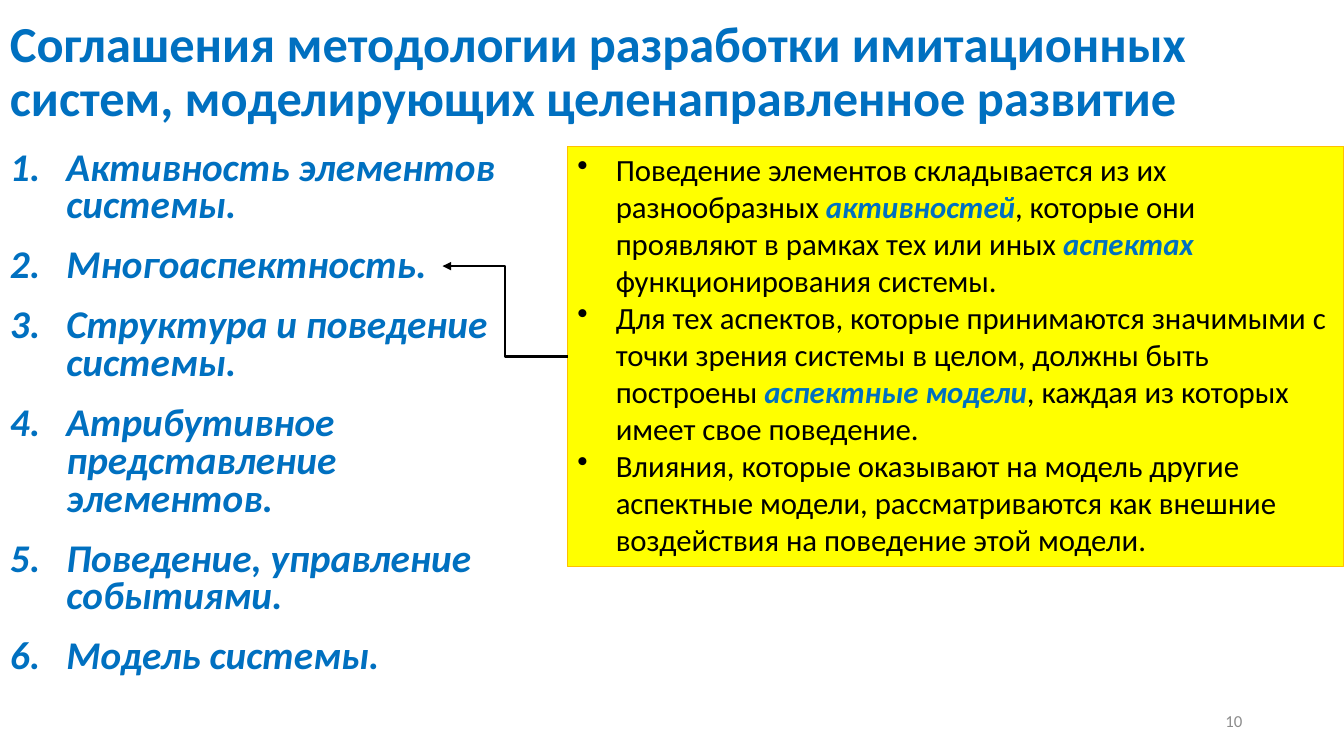
from typing import NamedTuple

from lxml.etree import SubElement
from pptx import Presentation
from pptx.dml.color import RGBColor
from pptx.enum.shapes import MSO_CONNECTOR, MSO_SHAPE
from pptx.enum.text import MSO_ANCHOR, PP_ALIGN
from pptx.oxml.ns import qn
from pptx.util import Inches, Pt

SLIDE_WIDTH, SLIDE_HEIGHT = Inches(13.33), Inches(7.5)
FONT = "Calibri"
BLUE, BLACK, GRAY, YELLOW, GOLD = "0070C0", "000000", "8C8C8C", "FFFF00", "FFC000"


class Area(NamedTuple):
    """A rectangle in percent of the slide's width and height."""
    left: float
    top: float
    width: float
    height: float


class Span(NamedTuple):
    text: str
    emphasized: bool = False


class Style(NamedTuple):
    size: int
    color: str
    bold: bool = False
    italic: bool = False


TITLE_AREA = Area(0, 0, 98.2, 19.33)
LIST_AREA = Area(0, 19.33, 98.2, 71.2)
NOTE_AREA = Area(42.23, 19.33, 57.77, 55.6)
NUMBER_AREA = Area(70.67, 92.67, 22.5, 5.33)
ARROW_TIP = (32.93, 35.2)

TITLE_STYLE = Style(36, BLUE, bold=True)
LIST_STYLE = Style(28, BLUE, bold=True, italic=True)
NOTE_STYLE = Style(22, BLACK)
EMPHASIS_STYLE = Style(22, BLUE, bold=True, italic=True)
NUMBER_STYLE = Style(12, GRAY)

TITLE = ("Соглашения методологии разработки имитационных систем, "
         "моделирующих целенаправленное развитие")
AGREEMENTS = [
    "Активность элементов \nсистемы.",
    "Многоаспектность.",
    "Структура и поведение\nсистемы.",
    "Атрибутивное \nпредставление \nэлементов.",
    "Поведение, управление \nсобытиями.",
    "Модель системы.",
]
NOTES = [
    [Span("Поведение элементов складывается из их разнообразных "),
     Span("активностей", True),
     Span(", которые они проявляют в рамках тех или иных "),
     Span("аспектах ", True),
     Span("функционирования системы.")],
    [Span("Для тех аспектов, которые принимаются значимыми с точки зрения "
          "системы в целом, должны быть построены "),
     Span("аспектные модели", True),
     Span(", каждая из которых имеет свое поведение.")],
    [Span("Влияния, которые оказывают на модель другие аспектные модели, "
          "рассматриваются как внешние воздействия на поведение этой модели.")],
]


def rgb(color: str) -> RGBColor:
    return RGBColor.from_string(color)


def across(percent: float) -> int:
    return round(SLIDE_WIDTH * percent / 100)


def down(percent: float) -> int:
    return round(SLIDE_HEIGHT * percent / 100)


def place(area: Area) -> tuple[int, int, int, int]:
    return across(area.left), down(area.top), across(area.width), down(area.height)


def apply_style(font, style: Style) -> None:
    font.name, font.size = FONT, Pt(style.size)
    font.bold, font.italic = style.bold, style.italic
    font.color.rgb = rgb(style.color)


def set_marker(paragraph, indent: float, tag: str, **attributes: str) -> None:
    """Give the paragraph a hanging bullet or number."""
    properties = paragraph._p.get_or_add_pPr()
    properties.set("marL", str(Inches(indent)))
    properties.set("indent", str(-Inches(indent)))
    marker = properties.makeelement(qn(tag), attributes)
    properties.insert_element_before(marker, "a:tabLst", "a:defRPr", "a:extLst")


def next_paragraph(frame, index: int):
    return frame.add_paragraph() if index else frame.paragraphs[0]


def add_text(page, area: Area, texts: list[str], style: Style,
             anchor: MSO_ANCHOR = MSO_ANCHOR.MIDDLE) -> list:
    """Add a text box and return its paragraphs."""
    frame = page.shapes.add_textbox(*place(area)).text_frame
    frame.word_wrap = True
    frame.vertical_anchor = anchor
    for index, text in enumerate(texts):
        paragraph = next_paragraph(frame, index)
        paragraph.text = text
        apply_style(paragraph.font, style)
    return list(frame.paragraphs)


def add_agreements(page) -> None:
    for paragraph in add_text(page, LIST_AREA, AGREEMENTS, LIST_STYLE, MSO_ANCHOR.TOP):
        paragraph.line_spacing = 0.8
        paragraph.space_before, paragraph.space_after = Pt(10), Pt(6)
        set_marker(paragraph, 0.56, "a:buAutoNum", type="arabicPeriod")


def add_notes(page) -> None:
    box = page.shapes.add_shape(MSO_SHAPE.RECTANGLE, *place(NOTE_AREA))
    box.shadow.inherit = False
    box.fill.solid()
    box.fill.fore_color.rgb = rgb(YELLOW)
    box.line.color.rgb = rgb(GOLD)
    box.line.width = Pt(0.75)
    frame = box.text_frame
    frame.word_wrap = True
    frame.vertical_anchor = MSO_ANCHOR.TOP
    for index, spans in enumerate(NOTES):
        paragraph = next_paragraph(frame, index)
        paragraph.alignment = PP_ALIGN.LEFT
        set_marker(paragraph, 0.38, "a:buChar", char="•")
        for span in spans:
            run = paragraph.add_run()
            run.text = span.text
            apply_style(run.font, EMPHASIS_STYLE if span.emphasized else NOTE_STYLE)


def add_arrow(page) -> None:
    """Lead from the middle of the notes' left side to the second agreement."""
    start = NOTE_AREA.left, NOTE_AREA.top + NOTE_AREA.height / 2
    arrow = page.shapes.add_connector(
        MSO_CONNECTOR.ELBOW, across(start[0]), down(start[1]),
        across(ARROW_TIP[0]), down(ARROW_TIP[1]))
    arrow.line.color.rgb = rgb(BLACK)
    arrow.line.width = Pt(2)
    SubElement(arrow.line._get_or_add_ln(), qn("a:tailEnd"), type="triangle")
    SubElement(arrow._element.spPr, qn("a:effectLst"))


def main() -> None:
    deck = Presentation()
    deck.slide_width, deck.slide_height = SLIDE_WIDTH, SLIDE_HEIGHT
    page = deck.slides.add_slide(deck.slide_layouts[6])
    add_text(page, TITLE_AREA, [TITLE], TITLE_STYLE)[0].line_spacing = 0.9
    add_agreements(page)
    add_notes(page)
    add_arrow(page)
    add_text(page, NUMBER_AREA, ["10"], NUMBER_STYLE)[0].alignment = PP_ALIGN.RIGHT
    deck.save("out.pptx")


if __name__ == "__main__":
    main()
